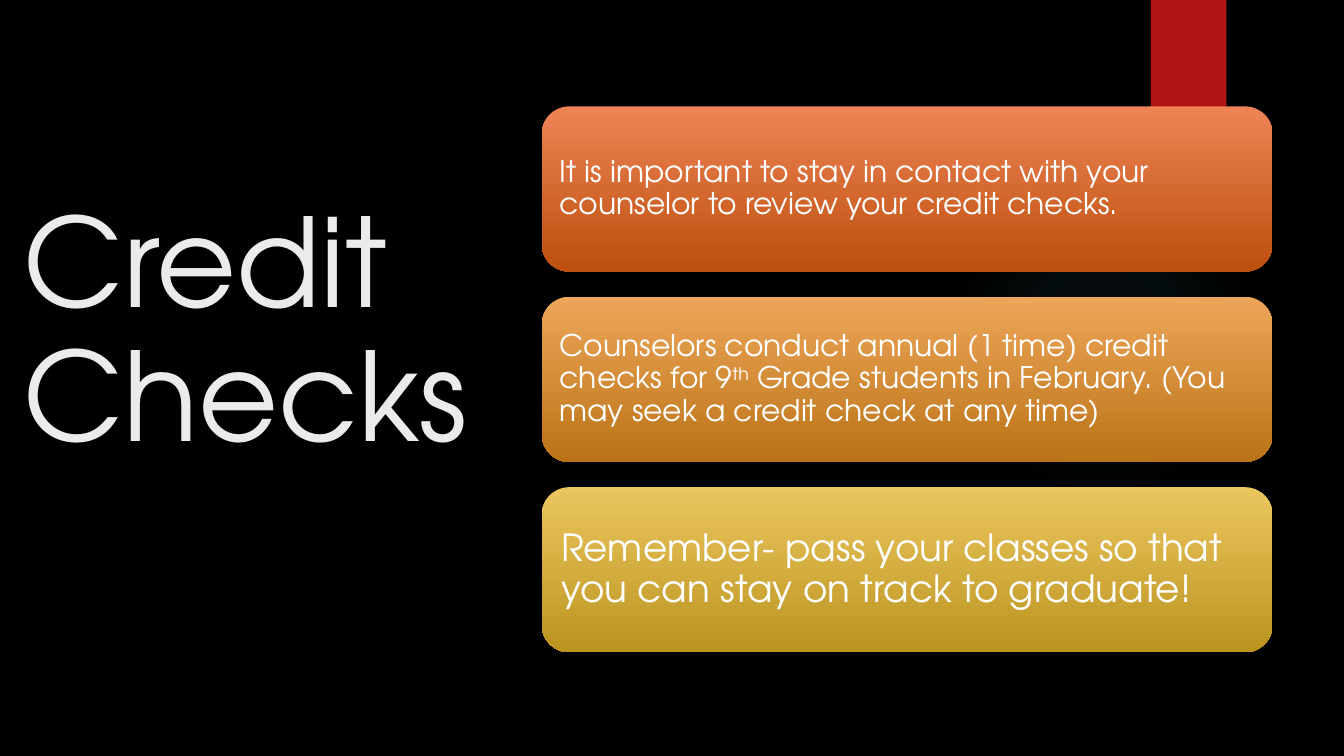
from dataclasses import dataclass

from lxml import etree
from pptx import Presentation
from pptx import util as u
from pptx.dml.color import RGBColor
from pptx.enum import shapes, text
from pptx.oxml import ns

PX = 9525


@dataclass(frozen=True)
class Theme:
    """Colours, font and type sizes of the slide."""
    background: str = "000000"
    glow: str = "50B9C1"
    ribbon: str = "B01513"
    title: str = "EBEBEB"
    body: str = "FFFFFF"
    orange: tuple = ("EE8455", "BC4F0E")
    amber: tuple = ("EDA659", "BB7317")
    gold: tuple = ("EBC65F", "BB941F")
    font: str = "TeX Gyre Adventor"
    title_size: int = 66
    body_size: int = 16
    reminder_size: int = 20


THEME = Theme()

CARDS = [
    (THEME.orange, THEME.body_size, 7, [
        ("It is important to stay in contact with your counselor to review your credit checks.", 0)]),
    (THEME.amber, THEME.body_size, 7, [
        ("Counselors conduct annual (1 time) credit checks for 9", 0),
        ("th", 30),
        (" Grade students in February. (You may seek a credit check at any time)", 0)]),
    (THEME.gold, THEME.reminder_size, 8, [
        ("Remember- pass your classes so that you can stay on track to graduate!", 0)]),
]


def px(*lengths):
    """Turn whole pixels into EMU."""
    return [u.Emu(length * PX) for length in lengths]


def add_plain_shape(slide, kind, box):
    """Add a preset shape without line or shadow."""
    shape = slide.shapes.add_shape(kind, *px(*box))
    shape.shadow.inherit = False
    shape.line.fill.background()
    return shape


def write_text(text_frame, pieces, size, color):
    """Write one left-aligned, wrapped paragraph of (words, baseline) pieces."""
    text_frame.word_wrap = True
    text_frame.vertical_anchor = text.MSO_ANCHOR.MIDDLE
    paragraph = text_frame.paragraphs[0]
    paragraph.alignment = text.PP_ALIGN.LEFT
    paragraph.line_spacing = 0.9
    for words, baseline in pieces:
        run = paragraph.add_run()
        run.text = words
        run.font.name = THEME.font
        run.font.size = u.Pt(size)
        run.font.color.rgb = RGBColor.from_string(color)
        if baseline:
            run.font._element.set("baseline", str(baseline * 1000))


def add_glow(slide, box):
    """Add a faint ellipse that fades out from its centre."""
    shape = add_plain_shape(slide, shapes.MSO_SHAPE.OVAL, box)
    shape.fill.background()
    stops = "".join(
        f'<a:gs pos="{position * 1000}"><a:srgbClr val="{THEME.glow}">'
        f'<a:alpha val="{alpha * 1000}"/></a:srgbClr></a:gs>'
        for position, alpha in [(0, 7), (36, 6), (69, 0)])
    gradient = etree.fromstring(
        f'<a:gradFill {ns.nsdecls("a")}><a:gsLst>{stops}</a:gsLst><a:path path="circle">'
        '<a:fillToRect l="50000" t="50000" r="50000" b="50000"/></a:path></a:gradFill>')
    properties = shape._element.spPr
    properties.replace(properties.find(ns.qn("a:noFill")), gradient)


def add_ribbon(slide, box):
    """Add the solid ribbon at the top edge."""
    shape = add_plain_shape(slide, shapes.MSO_SHAPE.RECTANGLE, box)
    shape.fill.solid()
    shape.fill.fore_color.rgb = RGBColor.from_string(THEME.ribbon)


def add_title(slide, words, box):
    """Add the large title."""
    shape = slide.shapes.add_textbox(*px(*box))
    write_text(shape.text_frame, [(words, 0)], THEME.title_size, THEME.title)


def add_card(slide, box, colors, size, margin, pieces):
    """Add a rounded card shaded from top to bottom, with its text."""
    shape = add_plain_shape(slide, shapes.MSO_SHAPE.ROUNDED_RECTANGLE, box)
    shape.fill.gradient()
    shape.fill.gradient_angle = 270
    for stop, color in zip(shape.fill.gradient_stops, colors):
        stop.color.rgb = RGBColor.from_string(color)
    frame = shape.text_frame
    frame.margin_left, frame.margin_top, frame.margin_right, frame.margin_bottom = px(*[margin] * 4)
    write_text(frame, pieces, size, THEME.body)


def main():
    """Build and save the slide."""
    presentation = Presentation()
    presentation.slide_width, presentation.slide_height = px(960, 540)
    slide = presentation.slides.add_slide(presentation.slide_layouts[6])
    slide.background.fill.solid()
    slide.background.fill.fore_color.rgb = RGBColor.from_string(THEME.background)
    add_glow(slide, (678, 132, 222, 222))
    add_ribbon(slide, (822, 0, 54, 90))
    add_title(slide, "Credit Checks", (7, 47, 342, 384))
    for index, card in enumerate(CARDS):
        add_card(slide, (387, 76 + 136 * index, 522, 118), *card)
    presentation.save("out.pptx")


if __name__ == "__main__":
    main()
